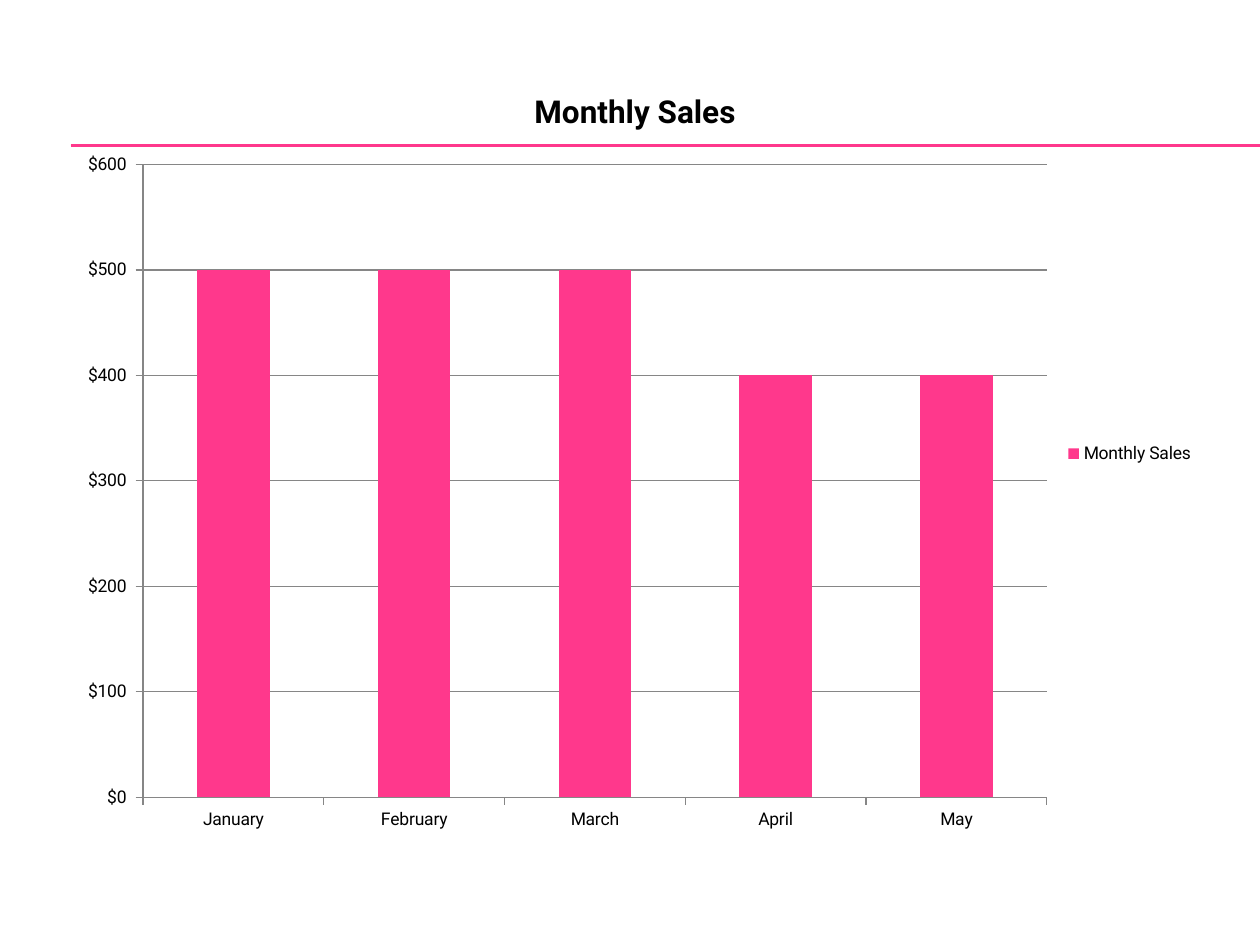
from lxml import etree
from pptx import Presentation
from pptx.chart.data import CategoryChartData as ChartData
from pptx.dml.color import RGBColor
from pptx.enum.chart import XL_CHART_TYPE as Kind, XL_LEGEND_POSITION as Side
from pptx.enum.chart import XL_TICK_MARK as Tick
from pptx.enum.shapes import MSO_CONNECTOR as Link
from pptx.oxml import parse_xml
from pptx.oxml.ns import nsdecls, qn
from pptx.util import Inches, Pt

PINK = "FF388C"
GRAY = "868686"


def paint(target, color):
    """Give a fill a solid colour."""
    target.solid()
    target.fore_color.rgb = RGBColor.from_string(color)


def style(font, size, bold=False):
    font.name = "Roboto"
    font.size = Pt(size)
    font.bold = bold
    paint(font.fill, "000000")


prs = Presentation()
prs.slide_width = Inches(10)
prs.slide_height = Inches(7.5)
slide = prs.slides.add_slide(prs.slide_layouts[6])

# Double rule under the title
for y in (1.15, 1.16):
    rule = slide.shapes.add_connector(
        Link.STRAIGHT, Inches(0.56), Inches(y), Inches(10), Inches(y))
    paint(rule.line.fill, PINK)
    rule.line.width = Pt(0.75)
    etree.SubElement(rule.element.spPr, qn("a:effectLst"))

# Sales chart
data = ChartData(number_format='"$"#,##0_);[Red]\\("$"#,##0\\)')
data.categories = ["January", "February", "March", "April", "May"]
data.add_series("Monthly Sales", [500, 500, 500, 400, 400])
chart = slide.shapes.add_chart(
    Kind.COLUMN_CLUSTERED, Inches(0.5), Inches(0.5),
    Inches(9.08), Inches(6.2), data).chart
style(chart.font, 10)

chart.has_title = True
run = chart.chart_title.text_frame.paragraphs[0].add_run()
run.text = "Monthly Sales"
style(run.font, 18, True)
chart.chart_title.include_in_layout = False

chart.has_legend = True
chart.legend.position = Side.RIGHT
chart.legend.include_in_layout = False

plot = chart.plots[0]
plot.gap_width = 150
plot.vary_by_categories = False
paint(plot.series[0].format.fill, PINK)

values = chart.value_axis
values.minimum_scale, values.maximum_scale, values.major_unit = 0, 600, 100
values.has_major_gridlines = True
for axis in (chart.category_axis, values):
    axis.major_tick_mark = Tick.OUTSIDE
    axis.minor_tick_mark = Tick.NONE
    paint(axis.format.line.fill, GRAY)
    axis.format.line.width = Pt(0.75)
grid = values.major_gridlines.format.line
paint(grid.fill, GRAY)
grid.width = Pt(0.75)

# Fixed inner plot area, as fractions of the chart
area = chart.element.find(".//" + qn("c:plotArea"))
for old in area.findall(qn("c:layout")):
    area.remove(old)
parts = "".join(
    f'<c:{tag} val="{val}"/>' for tag, val in (
        ("layoutTarget", "inner"), ("xMode", "edge"), ("yMode", "edge"),
        ("x", 0.07), ("y", 0.13), ("w", 0.79), ("h", 0.81)))
area.insert(0, parse_xml(
    f'<c:layout {nsdecls("c")}><c:manualLayout>{parts}'
    '</c:manualLayout></c:layout>'))

prs.save("out.pptx")
